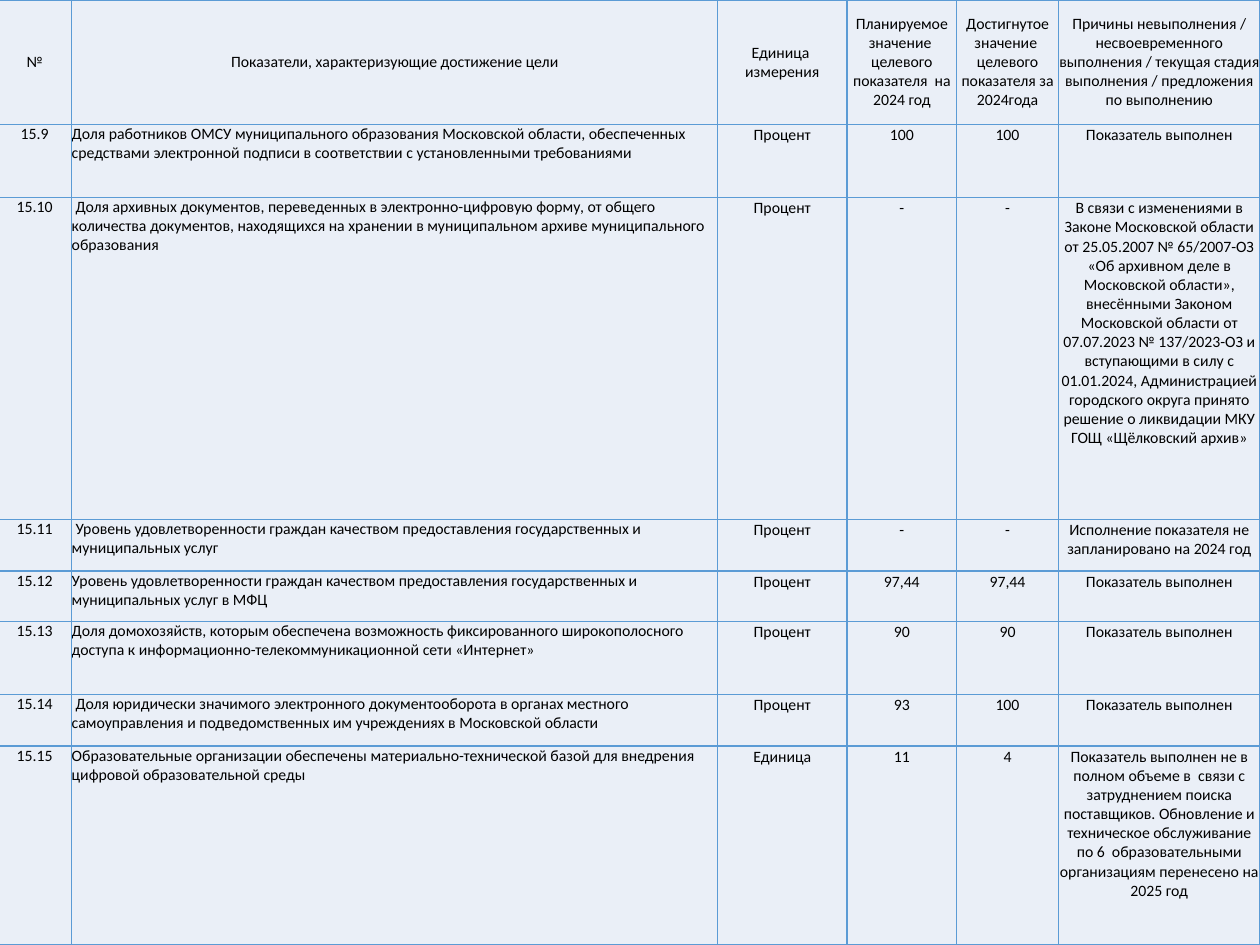
from lxml import etree
from pptx import Presentation
from pptx import util as u
from pptx.dml.color import RGBColor
from pptx.enum import text
from pptx.oxml import ns

PAGE_WIDTH, PAGE_HEIGHT = 10, 7.5
FONT, INK, FILL, LINE = "Calibri", "000000", "EAEFF7", "5B9BD5"

# Relative sizes of the grid
COLUMNS = [0.59, 5.13, 1.03, 0.87, 0.81, 1.6]
ROWS = [0.99, 0.58, 2.56, 0.41, 0.4, 0.58, 0.41, 1.58]

DONE = "Показатель выполнен"
HEADER = [
    "№",
    "Показатели, характеризующие достижение цели",
    "Единица  измерения",
    "Планируемое значение  целевого показателя  на 2024 год",
    "Достигнутое значение  целевого показателя за 2024года",
    "Причины невыполнения / несвоевременного выполнения / текущая стадия "
    "выполнения / предложения по выполнению",
]
INDICATORS = [
    ["15.9", "Доля работников ОМСУ муниципального образования Московской области, "
     "обеспеченных средствами электронной подписи в соответствии с установленными "
     "требованиями", "Процент", "100", "100", DONE],
    ["15.10", "Доля архивных документов, переведенных в электронно-цифровую форму, "
     "от общего количества документов, находящихся на хранении в муниципальном "
     "архиве муниципального образования", "Процент", "-", "-",
     "В связи с изменениями в Законе Московской области от 25.05.2007 № 65/2007-ОЗ "
     "«Об архивном деле в Московской области», внесёнными Законом Московской области "
     "от 07.07.2023 № 137/2023-ОЗ и вступающими в силу с 01.01.2024, Администрацией "
     "городского округа принято решение о ликвидации МКУ ГОЩ «Щёлковский архив»"],
    ["15.11", "Уровень удовлетворенности граждан качеством предоставления "
     "государственных и муниципальных услуг", "Процент", "-", "-",
     "Исполнение показателя не запланировано на 2024 год"],
    ["15.12", "Уровень удовлетворенности граждан качеством предоставления "
     "государственных и муниципальных услуг в МФЦ", "Процент", "97,44", "97,44", DONE],
    ["15.13", "Доля домохозяйств, которым обеспечена возможность фиксированного "
     "широкополосного доступа к информационно-телекоммуникационной сети «Интернет»",
     "Процент", "90", "90", DONE],
    ["15.14", "Доля юридически значимого электронного документооборота в органах "
     "местного самоуправления и подведомственных им учреждениях в Московской области",
     "Процент", "93", "100", DONE],
    ["15.15", "Образовательные организации обеспечены материально-технической базой "
     "для внедрения цифровой образовательной среды", "Единица", "11", "4",
     "Показатель выполнен не в полном объеме в  связи с затруднением поиска "
     "поставщиков. Обновление и техническое обслуживание по 6  образовательными "
     "организациям перенесено на 2025 год"],
]
INDENTED = {"15.10", "15.11", "15.14"}  # first line set in slightly


def color(value):
    return RGBColor.from_string(value)


def write(cell, words, size=9, align=text.PP_ALIGN.CENTER,
          anchor=text.MSO_ANCHOR.TOP, inset=0, indent=0):
    cell.vertical_anchor = anchor
    cell.margin_left = cell.margin_right = cell.margin_top = u.Inches(inset)
    cell.margin_bottom = 0
    para = cell.text_frame.paragraphs[0]
    para.alignment = align
    if indent:
        para._p.get_or_add_pPr().set("indent", str(u.Inches(indent)))
    span = para.add_run()
    span.text = words
    span.font.name, span.font.size = FONT, u.Pt(size)
    span.font.color.rgb = color(INK)


def paint(cell):
    """Outline all four sides of a cell, then fill it."""
    properties = cell._tc.get_or_add_tcPr()
    for side in ("lnL", "lnR", "lnT", "lnB"):
        line = etree.SubElement(properties, ns.qn("a:" + side), w=str(u.Pt(1)))
        solid = etree.SubElement(line, ns.qn("a:solidFill"))
        etree.SubElement(solid, ns.qn("a:srgbClr"), val=LINE)
    cell.fill.solid()
    cell.fill.fore_color.rgb = color(FILL)


def add_indicator_table(page, left, top, width, height):
    records = [HEADER] + INDICATORS
    frame = page.shapes.add_table(len(ROWS), len(COLUMNS), u.Inches(left),
                                  u.Inches(top), u.Inches(width), u.Inches(height))
    table = frame.table
    table.first_row = table.horz_banding = False

    # Share the box out among the columns and rows
    for column, share in zip(table.columns, COLUMNS):
        column.width = u.Inches(width * share / sum(COLUMNS))
    for row, share in zip(table.rows, ROWS):
        row.height = u.Inches(height * share / sum(ROWS))

    # Header is centred in height; indicator names are set left
    for r, record in enumerate(records):
        for c, words in enumerate(record):
            cell = table.cell(r, c)
            if r == 0:
                write(cell, words, anchor=text.MSO_ANCHOR.MIDDLE)
            elif c == 1:
                write(cell, words, align=text.PP_ALIGN.LEFT,
                      indent=0.03 if record[0] in INDENTED else 0)
            else:
                write(cell, words, inset=0.01 if c > 1 else 0)
            paint(cell)


def main():
    deck = Presentation()
    deck.slide_width, deck.slide_height = u.Inches(PAGE_WIDTH), u.Inches(PAGE_HEIGHT)
    page = deck.slides.add_slide(deck.slide_layouts[6])
    add_indicator_table(page, -0.02, 0, PAGE_WIDTH + 0.02, PAGE_HEIGHT)
    deck.save("out.pptx")


if __name__ == "__main__":
    main()
